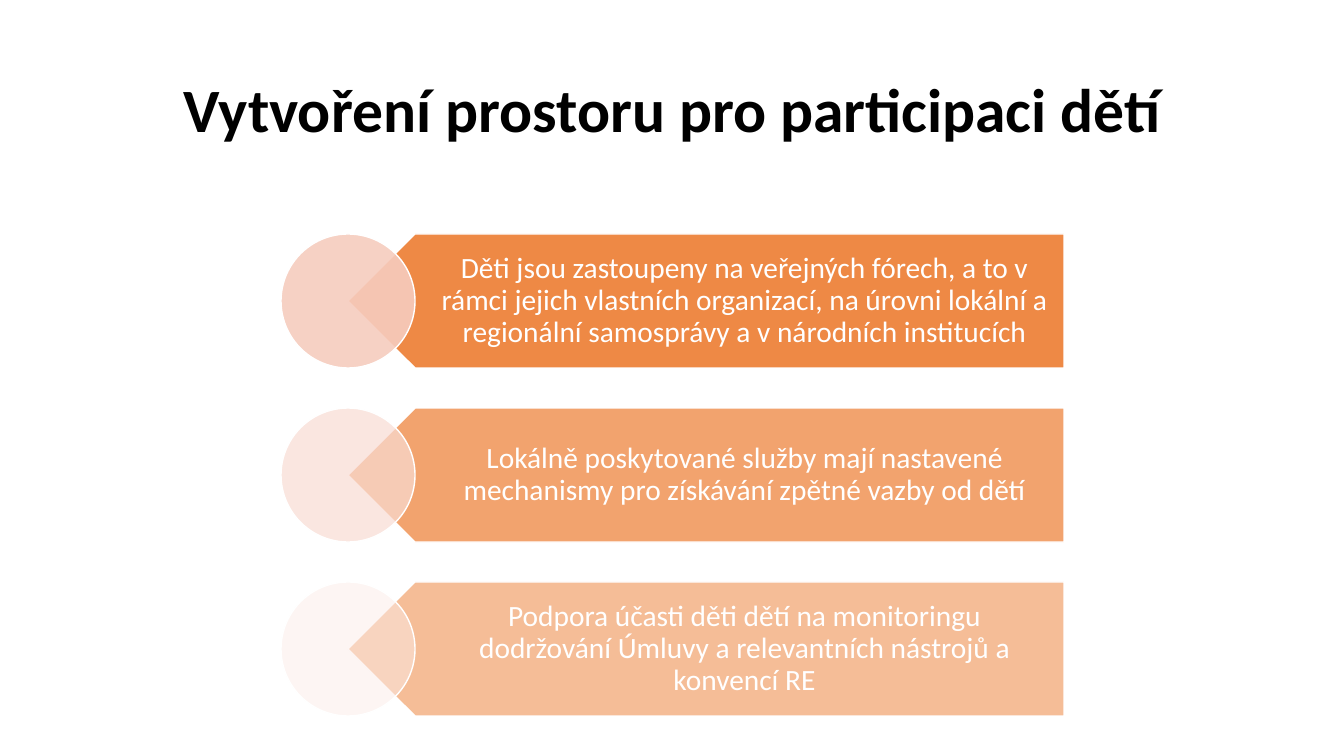
import pptx
import pptx.dml.color
import pptx.enum.shapes
import pptx.enum.text
import pptx.oxml
import pptx.oxml.ns
import pptx.util

COLORS = {
    "title": "000000",
    "white": "FFFFFF",
    "arrow": "ED7D31",
}
EMU_PER_PX = 914400 / 100.8
SHAPES = pptx.enum.shapes.MSO_SHAPE

# Text, circle colour, opacity in percent
GOALS = [
    ("Děti jsou zastoupeny na veřejných fórech, a to v rámci jejich vlastních organizací, "
     "na úrovni lokální a regionální samosprávy a v národních institucích", "F6CCBE", 90),
    ("Lokálně poskytované služby mají nastavené mechanismy pro získávání zpětné vazby od dětí",
     "F9DCD4", 70),
    ("Podpora účasti děti dětí na monitoringu dodržování Úmluvy a relevantních nástrojů "
     "a konvencí RE", "FCECE8", 50),
]
FIRST_TOP, ROW_STEP, ROW_HEIGHT = 234, 174, 134


def px(length):
    return pptx.util.Emu(round(length * EMU_PER_PX))


def rgb(value):
    return pptx.dml.color.RGBColor.from_string(value)


class Deck:
    def __init__(self, font="Calibri"):
        self.font = font
        self.presentation = pptx.Presentation()
        self.presentation.slide_width = px(1344)
        self.presentation.slide_height = px(756)
        self.slide = self.presentation.slides.add_slide(self.presentation.slide_layouts[6])

    def text(self, text, box, size, color, bold=False, insets=(10, 5, 10, 5)):
        """Add a centred text box; box and insets run left, top, then the rest."""
        frame = self.slide.shapes.add_textbox(*map(px, box)).text_frame
        frame.word_wrap = True
        frame.vertical_anchor = pptx.enum.text.MSO_ANCHOR.MIDDLE
        (frame.margin_left, frame.margin_top,
         frame.margin_right, frame.margin_bottom) = map(px, insets)
        paragraph = frame.paragraphs[0]
        paragraph.alignment = pptx.enum.text.PP_ALIGN.CENTER
        paragraph.line_spacing = 0.9
        run = paragraph.add_run()
        run.text = text
        run.font.name = self.font
        run.font.size = pptx.util.Pt(size)
        run.font.bold = bold
        run.font.color.rgb = rgb(color)

    def shape(self, kind, box, color, opacity, rotation=0):
        """Add a translucent shape with a thin white outline."""
        shape = self.slide.shapes.add_shape(kind, *map(px, box))
        shape.shadow.inherit = False
        shape.rotation = rotation
        shape.fill.solid()
        shape.fill.fore_color.rgb = rgb(color)
        fill_color = shape.fill._xPr.find(".//" + pptx.oxml.ns.qn("a:srgbClr"))
        alpha = pptx.oxml.parse_xml(
            f'<a:alpha {pptx.oxml.ns.nsdecls("a")} val="{opacity * 1000}"/>')
        fill_color.append(alpha)
        shape.line.color.rgb = rgb(COLORS["white"])
        shape.line.width = pptx.util.Pt(1)

    def goal(self, text, top, circle_color, opacity):
        self.shape(SHAPES.PENTAGON, (348, top, 716, ROW_HEIGHT), COLORS["arrow"], opacity, 180)
        self.text(text, (382, top, 682, ROW_HEIGHT), 21, COLORS["white"],
                  insets=(59, 9, 16, 9))
        self.shape(SHAPES.OVAL, (281, top, ROW_HEIGHT, ROW_HEIGHT), circle_color, opacity)


def main():
    deck = Deck()
    deck.text("Vytvoření prostoru pro participaci dětí", (93, 40, 1159, 146), 44,
              COLORS["title"], bold=True)
    for row, (text, circle_color, opacity) in enumerate(GOALS):
        deck.goal(text, FIRST_TOP + row * ROW_STEP, circle_color, opacity)
    deck.presentation.save("out.pptx")


if __name__ == "__main__":
    main()
